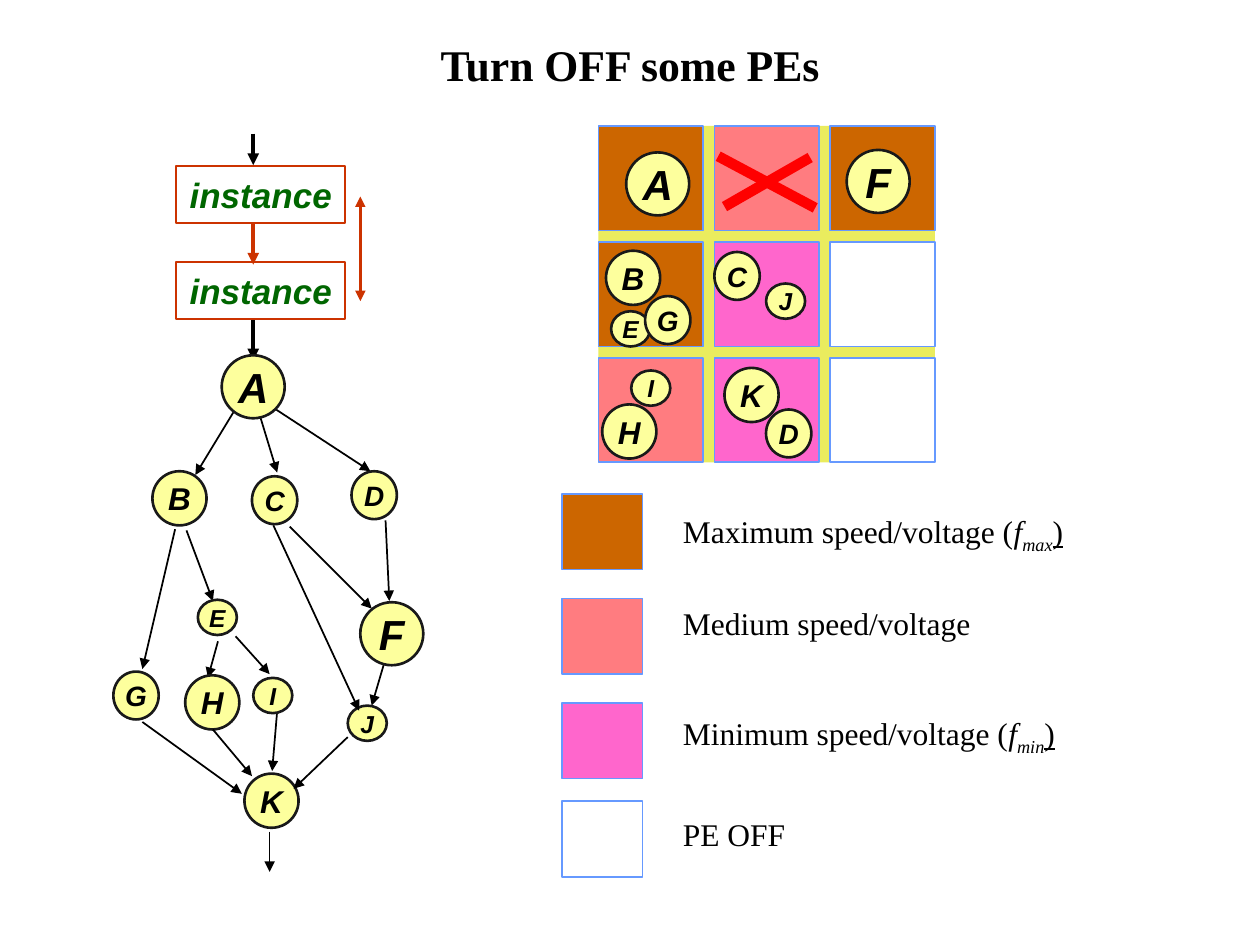
from dataclasses import dataclass
from typing import NamedTuple

from lxml.etree import SubElement
from pptx import Presentation
from pptx.dml.color import RGBColor
from pptx.enum.shapes import MSO_CONNECTOR, MSO_SHAPE
from pptx.enum.text import MSO_ANCHOR, PP_ALIGN
from pptx.oxml.ns import qn
from pptx.util import Emu, Pt

PX_PER_INCH = 100
EMU_PER_PX = 914400 // PX_PER_INCH


@dataclass(frozen=True)
class Theme:
    """Colours, fonts and type sizes of the slide."""
    black: str = "000000"
    red: str = "FF0000"
    rust: str = "CC3300"
    green: str = "006600"
    node_fill: str = "FDFF9D"
    node_edge: str = "191919"
    mesh: str = "EAEC5E"
    cell_edge: str = "6699FF"
    maximum: str = "CC6600"
    medium: str = "FF7C80"
    minimum: str = "FF66CC"
    off: str = "FFFFFF"
    serif: str = "Times New Roman"
    sans: str = "Arial"
    title_size: int = 25
    label_size: int = 18
    instance_size: int = 20


class Box(NamedTuple):
    """A rectangle in px."""
    left: int
    top: int
    width: int
    height: int


class Task(NamedTuple):
    """A task node with the px position of its top left corner."""
    letter: str
    left: int
    top: int


class TaskSize(NamedTuple):
    """The px extent and type size of a task node."""
    width: int
    height: int
    points: int


class Link(NamedTuple):
    """A line between two px points."""
    x1: int
    y1: int
    x2: int
    y2: int
    color: str = "000000"
    weight: float = 1
    head: bool = False
    tail: bool = True


class LegendEntry(NamedTuple):
    """A swatch with its label and optional subscript of f."""
    swatch_top: int
    label_top: int
    color: str
    label: str
    subscript: str = ""


THEME = Theme()
HUGE, LARGE = TaskSize(50, 50, 24), TaskSize(43, 43, 18)
MIDDLE, SMALL = TaskSize(36, 38, 16), TaskSize(31, 28, 14)
TASK_SIZES = (dict.fromkeys("AF", HUGE) | dict.fromkeys("BHK", LARGE)
              | dict.fromkeys("CDG", MIDDLE) | dict.fromkeys("EIJ", SMALL))

GRAPH_TASKS = [
    Task("A", 176, 282), Task("B", 121, 374), Task("C", 200, 378), Task("E", 157, 476),
    Task("D", 279, 374), Task("F", 286, 478), Task("G", 90, 533), Task("H", 147, 536),
    Task("I", 201, 538), Task("J", 276, 560), Task("K", 194, 614),
]
MAPPED_TASKS = [
    Task("A", 497, 121), Task("B", 481, 199), Task("C", 567, 200), Task("D", 608, 325),
    Task("F", 672, 119), Task("E", 485, 247), Task("G", 512, 235), Task("H", 478, 321),
    Task("I", 501, 294), Task("J", 608, 225), Task("K", 575, 292),
]
LINKS_BELOW_TASKS = [
    Link(186, 326, 155, 377), Link(206, 329, 220, 375), Link(216, 323, 294, 374),
    Link(139, 420, 113, 531), Link(148, 421, 169, 477), Link(173, 509, 165, 538),
    Link(187, 505, 214, 535), Link(230, 418, 295, 483), Link(306, 413, 309, 477),
    Link(305, 526, 295, 560), Link(220, 564, 216, 612), Link(113, 573, 192, 630),
    Link(214, 660, 214, 692), Link(201, 253, 201, 286, weight=2.25),
]
LINKS_ABOVE_TASKS = [
    Link(217, 417, 285, 564), Link(169, 579, 200, 616), Link(276, 585, 233, 626),
    Link(201, 106, 201, 131, weight=2.25),
    Link(201, 177, 201, 210, THEME.rust, 2.25),
    Link(286, 156, 286, 239, THEME.rust, 1.5, head=True),
]
CROSS = [
    Link(570, 124, 647, 165, THEME.red, 6, tail=False),
    Link(643, 125, 575, 164, THEME.red, 6, tail=False),
]
INSTANCES = [Box(140, top, 134, 45) for top in (132, 208)]
MESH_LEFT, MESH_TOP, CELL, GAP = 475, 100, 83, 9
CELL_COLORS = [
    [THEME.maximum, THEME.medium, THEME.maximum],
    [THEME.maximum, THEME.minimum, THEME.off],
    [THEME.medium, THEME.minimum, THEME.off],
]
LEGEND = [
    LegendEntry(392, 407, THEME.maximum, "Maximum speed/voltage", "max"),
    LegendEntry(475, 483, THEME.medium, "Medium speed/voltage"),
    LegendEntry(558, 567, THEME.minimum, "Minimum speed/voltage", "min"),
    LegendEntry(636, 650, THEME.off, "PE OFF"),
]


def px(length: int) -> Emu:
    """Turn px into EMU."""
    return Emu(length * EMU_PER_PX)


def style(font, family: str, points: float, color: str, bold=False, italic=False) -> None:
    """Set the look of a font."""
    font.name, font.size, font.bold, font.italic = family, Pt(points), bold, italic
    font.color.rgb = RGBColor.from_string(color)


def draw_shape(slide, kind, box: Box, fill: str | None, edge: str | None, weight: float = 1):
    """Draw a flat preset shape."""
    shape = slide.shapes.add_shape(kind, *map(px, box))
    shape.shadow.inherit = False
    if fill:
        shape.fill.solid()
        shape.fill.fore_color.rgb = RGBColor.from_string(fill)
    else:
        shape.fill.background()
    if edge:
        shape.line.color.rgb = RGBColor.from_string(edge)
        shape.line.width = Pt(weight)
    else:
        shape.line.fill.background()
    return shape


def write_centred(shape, text: str, points: int, color: str) -> None:
    """Write bold italic text in the middle of a shape."""
    frame = shape.text_frame
    frame.text = text
    frame.word_wrap = False
    frame.vertical_anchor = MSO_ANCHOR.MIDDLE
    paragraph = frame.paragraphs[0]
    paragraph.alignment = PP_ALIGN.CENTER
    style(paragraph.runs[0].font, THEME.sans, points, color, bold=True, italic=True)


def draw_task(slide, task: Task) -> None:
    """Draw a task node."""
    size = TASK_SIZES[task.letter]
    box = Box(task.left, task.top, size.width, size.height)
    node = draw_shape(slide, MSO_SHAPE.OVAL, box, THEME.node_fill, THEME.node_edge, 1.5)
    write_centred(node, task.letter, size.points, THEME.black)


def draw_link(slide, link: Link) -> None:
    """Draw a line with its arrowheads."""
    ends = map(px, link[:4])
    connector = slide.shapes.add_connector(MSO_CONNECTOR.STRAIGHT, *ends)
    connector.line.color.rgb = RGBColor.from_string(link.color)
    connector.line.width = Pt(link.weight)
    outline = connector.line._get_or_add_ln()
    for tag, shown in (("a:headEnd", link.head), ("a:tailEnd", link.tail)):
        if shown:
            SubElement(outline, qn(tag), type="triangle")
    SubElement(connector._element.spPr, qn("a:effectLst"))


def draw_mesh(slide) -> None:
    """Draw the grid of processing elements."""
    side = 3 * CELL + 2 * GAP
    draw_shape(slide, MSO_SHAPE.RECTANGLE, Box(MESH_LEFT, MESH_TOP, side, side), THEME.mesh, None)
    for row, colors in enumerate(CELL_COLORS):
        for column, color in enumerate(colors):
            box = Box(MESH_LEFT + column * (CELL + GAP), MESH_TOP + row * (CELL + GAP), CELL, CELL)
            draw_shape(slide, MSO_SHAPE.RECTANGLE, box, color, THEME.cell_edge)


def draw_legend_entry(slide, entry: LegendEntry) -> None:
    """Draw a swatch and its label."""
    swatch = Box(446, entry.swatch_top, 64, 60)
    draw_shape(slide, MSO_SHAPE.RECTANGLE, swatch, entry.color, THEME.cell_edge)
    frame = slide.shapes.add_textbox(*map(px, Box(542, entry.label_top, 420, 27))).text_frame
    frame.word_wrap = True
    frame.margin_left = frame.margin_right = frame.margin_top = frame.margin_bottom = 0
    paragraph = frame.paragraphs[0]
    paragraph.line_spacing = 0.9
    paragraph.text = entry.label + (" (" if entry.subscript else "")
    if entry.subscript:
        for part in ("f", entry.subscript, ")"):
            paragraph.add_run().text = part
    for run in paragraph.runs:
        italic = run.text in ("f", entry.subscript)
        style(run.font, THEME.serif, THEME.label_size, THEME.black, italic=italic)
        if run.text == entry.subscript:
            run.font._element.set("baseline", "-25000")
        run.font.underline = run.text == ")"


def write_title(slide) -> None:
    """Place and format the slide title."""
    title = slide.shapes.title
    title.left, title.top, title.width, title.height = map(px, Box(50, 25, 900, 125))
    title.text_frame.text = "Turn OFF some PEs"
    title.text_frame.vertical_anchor = MSO_ANCHOR.TOP
    paragraph = title.text_frame.paragraphs[0]
    paragraph.alignment = PP_ALIGN.CENTER
    style(paragraph.runs[0].font, THEME.serif, THEME.title_size, THEME.black, bold=True)


def main() -> None:
    """Build and save the slide."""
    deck = Presentation()
    deck.slide_width, deck.slide_height = px(1000), px(750)
    slide = deck.slides.add_slide(deck.slide_layouts[5])
    write_title(slide)
    for link in LINKS_BELOW_TASKS:
        draw_link(slide, link)
    for box in INSTANCES:
        instance = draw_shape(slide, MSO_SHAPE.RECTANGLE, box, None, THEME.rust)
        write_centred(instance, "instance", THEME.instance_size, THEME.green)
    draw_mesh(slide)
    for task in GRAPH_TASKS + MAPPED_TASKS:
        draw_task(slide, task)
    for link in LINKS_ABOVE_TASKS + CROSS:
        draw_link(slide, link)
    for entry in LEGEND:
        draw_legend_entry(slide, entry)
    deck.save("out.pptx")


if __name__ == "__main__":
    main()
